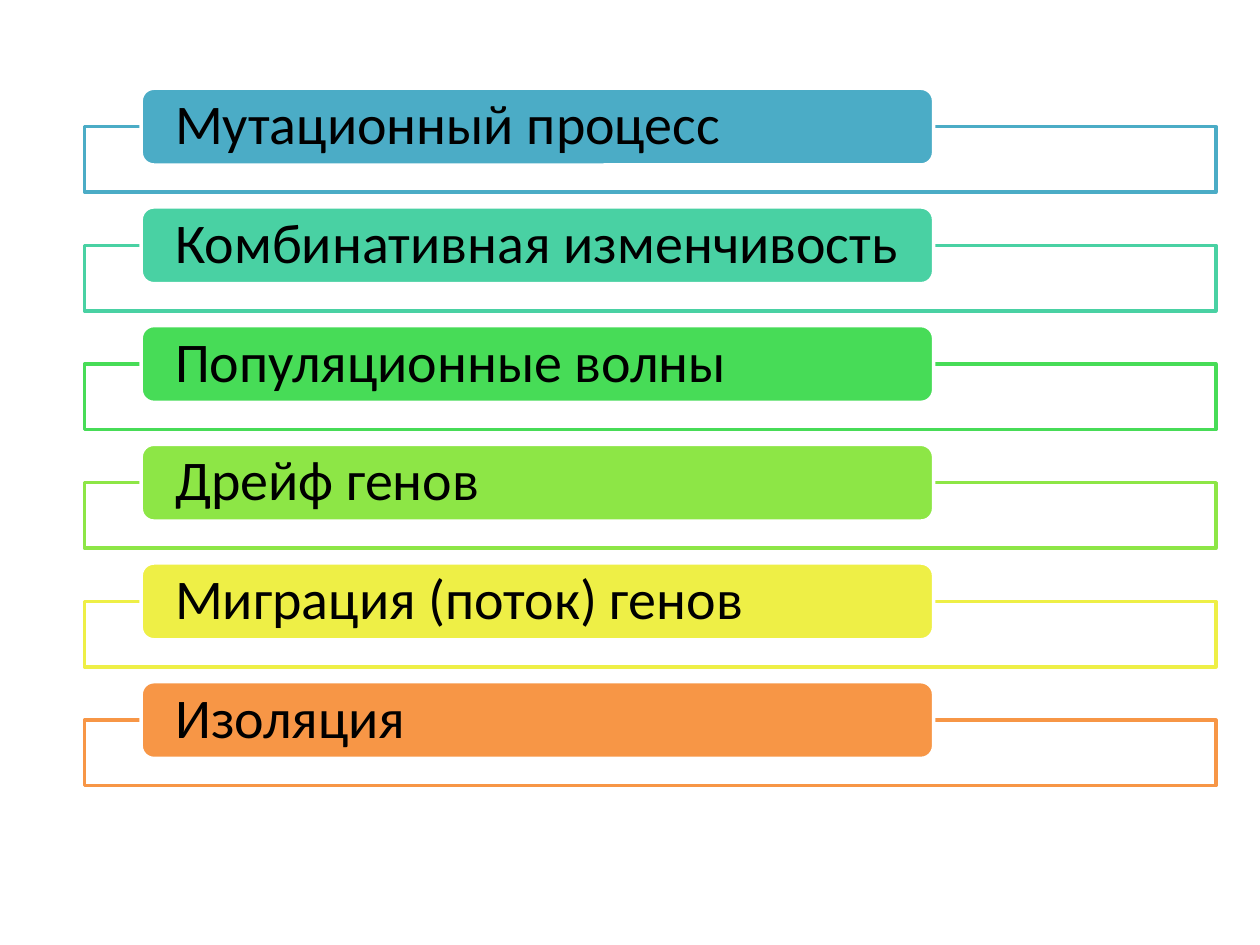
from lxml.etree import SubElement
from pptx import Presentation
from pptx.dml.color import RGBColor
from pptx.enum.shapes import MSO_SHAPE
from pptx.enum.text import MSO_ANCHOR, PP_ALIGN
from pptx.oxml.ns import qn
from pptx.util import Inches, Pt

THEME = {
    "font": "Calibri",
    "size": Pt(32),
    "line": Pt(2),
    "text": RGBColor.from_string("000000"),
    "white": RGBColor.from_string("FFFFFF"),
}
FACTORS = [
    ("Мутационный процесс", "4BACC6"),
    ("Комбинативная изменчивость", "49D1A3"),
    ("Популяционные волны", "47DC57"),
    ("Дрейф генов", "8DE646"),
    ("Миграция (поток) генов", "EEEF46"),
    ("Изоляция", "F79646"),
]
FIRST_TOP, LAST_TOP = 0.7, 5.41
PITCH = (LAST_TOP - FIRST_TOP) / (len(FACTORS) - 1)

prs = Presentation()
prs.slide_width, prs.slide_height = Inches(10), Inches(7.5)
s = prs.slides.add_slide(prs.slide_layouts[6])


def add_box(kind, x, y, w, h, fill, line):
    sp = s.shapes.add_shape(kind, Inches(x), Inches(y), Inches(w), Inches(h))
    sp.shadow.inherit = False
    sp.fill.solid()
    sp.fill.fore_color.rgb = fill
    sp.line.color.rgb = line
    sp.line.width = THEME["line"]
    return sp


for i, (label, hex_color) in enumerate(FACTORS):
    top = FIRST_TOP + i * PITCH
    color = RGBColor.from_string(hex_color)

    # Outlined frame, slightly transparent white
    frame = add_box(MSO_SHAPE.RECTANGLE, 0.67, top + 0.305, 8.98, 0.52,
                    THEME["white"], color)
    white = frame.fill._xPr.find(qn("a:solidFill"))[0]
    SubElement(white, qn("a:alpha"), val="90000")

    # Coloured label over the frame's top edge
    sp = add_box(MSO_SHAPE.ROUNDED_RECTANGLE, 1.12, top, 6.29, 0.61,
                 color, THEME["white"])
    tf = sp.text_frame
    frame_format = {
        "word_wrap": True,
        "vertical_anchor": MSO_ANCHOR.MIDDLE,
        "margin_left": Inches(0.24),
        "margin_right": Inches(0.24),
        "margin_top": 0,
        "margin_bottom": 0,
    }
    for name, value in frame_format.items():
        setattr(tf, name, value)
    p = tf.paragraphs[0]
    p.alignment = PP_ALIGN.LEFT
    p.line_spacing = 0.9
    r = p.add_run()
    r.text = label
    r.font.name = THEME["font"]
    r.font.size = THEME["size"]
    r.font.color.rgb = THEME["text"]

prs.save("out.pptx")
